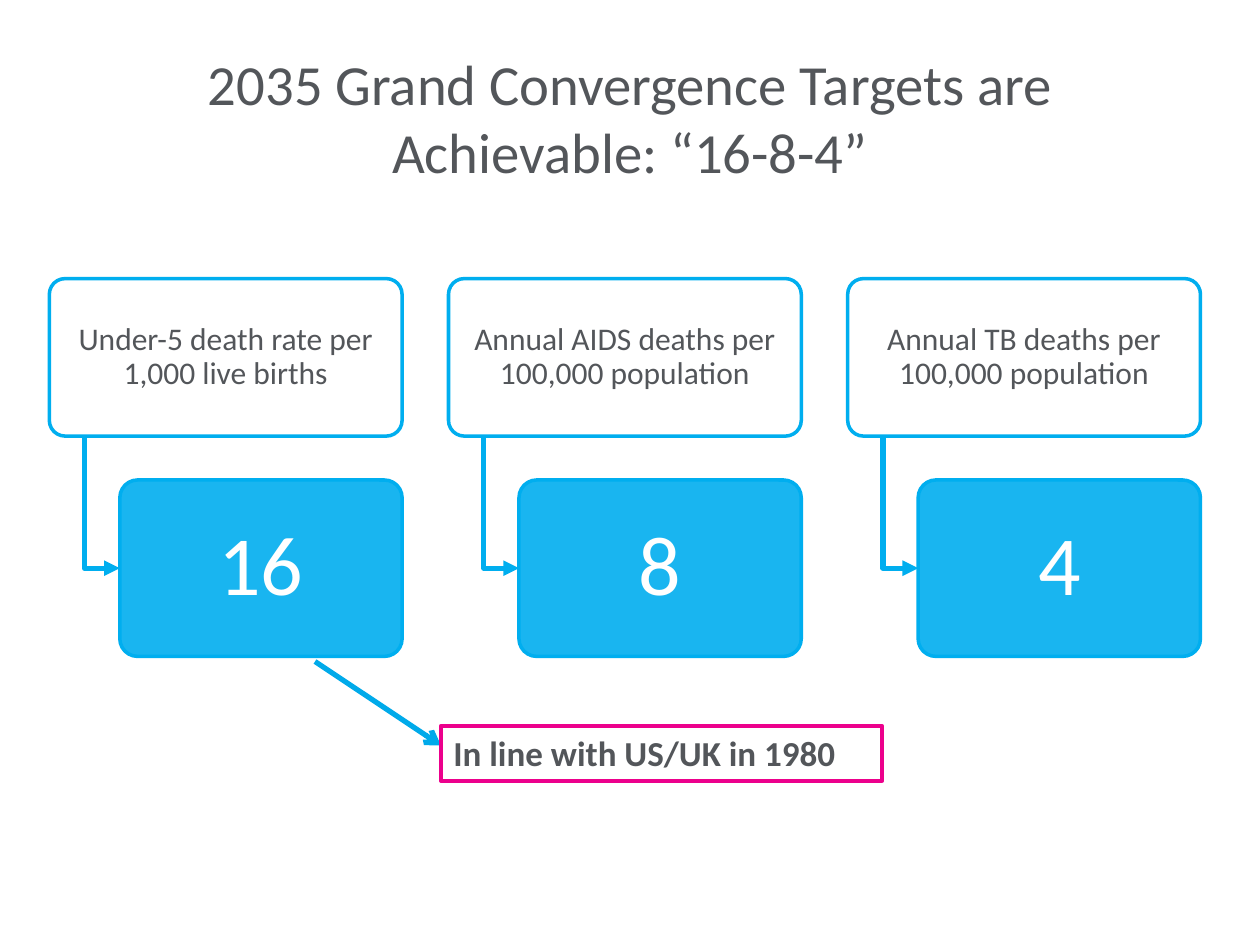
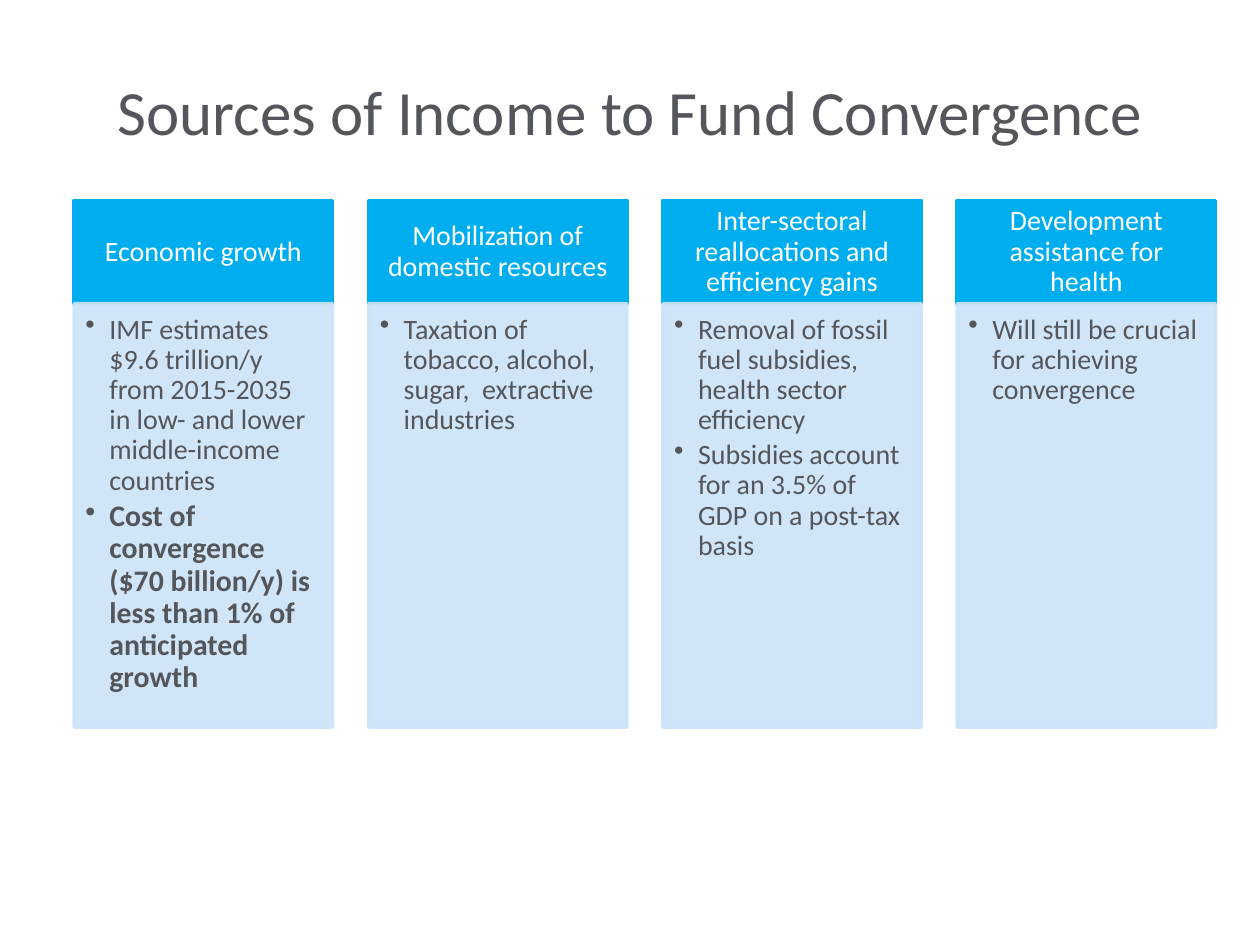
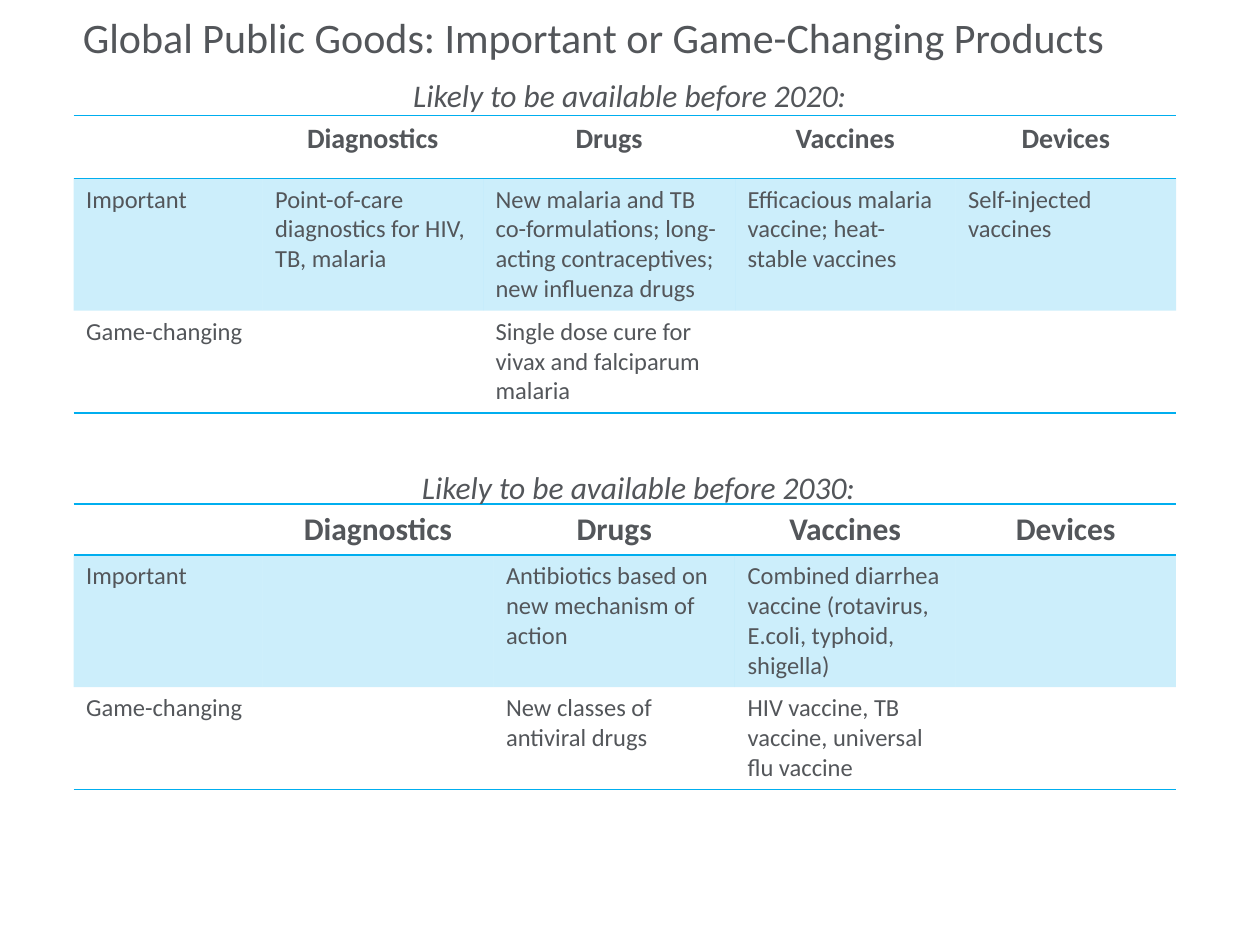
from dataclasses import dataclass
from typing import Any

from lxml import etree
from pptx import Presentation
from pptx.dml.color import RGBColor
from pptx.enum.shapes import MSO_CONNECTOR, MSO_SHAPE
from pptx.enum.text import MSO_ANCHOR, MSO_AUTO_SIZE, PP_ALIGN
from pptx.oxml.ns import qn
from pptx.util import Pt

RECTANGLE = MSO_SHAPE.RECTANGLE
ROUNDED = MSO_SHAPE.ROUNDED_RECTANGLE
STRAIGHT = MSO_CONNECTOR.STRAIGHT
TOP, MIDDLE = MSO_ANCHOR.TOP, MSO_ANCHOR.MIDDLE
LEFT, CENTER = PP_ALIGN.LEFT, PP_ALIGN.CENTER
NO_AUTOFIT, GROW = MSO_AUTO_SIZE.NONE, MSO_AUTO_SIZE.SHAPE_TO_FIT_TEXT

FONT = "Calibri"
COLOURS = {
    "text": "53565A",
    "white": "FFFFFF",
    "blue": "00AEEF",
    "arrow": "00AAEA",
    "pale": "CCE3F9",
    "pink": "EC008C",
}
TITLE_ONLY = 5
NO_TABLE_STYLE = "{2D5ABB26-0587-4C30-8999-92F81FD0307C}"


@dataclass
class Area:
    left: float
    top: float
    width: float
    height: float

    def points(self) -> list[int]:
        return [Pt(value) for value in (self.left, self.top, self.width, self.height)]


@dataclass
class Span:
    text: str
    size: float
    colour: str = "text"
    bold: bool = False
    italic: bool = False


@dataclass
class Target:
    measure: str
    value: str


@dataclass
class Source:
    heading: str
    points: list[Span]


@dataclass
class Goods:
    area: Area
    widths: list[float]
    heights: list[float]
    heading_size: float
    rows: list[list[str]]


TARGETS = [
    Target("Under-5 death rate per 1,000 live births", "16"),
    Target("Annual AIDS deaths per 100,000 population", "8"),
    Target("Annual TB deaths per 100,000 population", "4"),
]

SOURCES = [
    Source("Economic growth", [
        Span("IMF estimates $9.6 trillion/y from 2015-2035 in low- and lower "
             "middle-income countries", 16),
        Span("Cost of convergence ($70 billion/y) is less than 1% of anticipated growth",
             17, bold=True),
    ]),
    Source("Mobilization of domestic resources", [
        Span("Taxation of tobacco, alcohol, sugar,  extractive industries", 16),
    ]),
    Source("Inter-sectoral reallocations and efficiency gains", [
        Span("Removal of fossil fuel subsidies, health sector efficiency", 16),
        Span("Subsidies account for an 3.5% of GDP on a post-tax basis", 16),
    ]),
    Source("Development assistance for health", [
        Span("Will still be crucial for achieving convergence", 16),
    ]),
]

HEADINGS = ["", "Diagnostics", "Drugs", "Vaccines", "Devices"]
GOODS = [
    Goods(Area(42, 66, 630, 170), [108, 126, 144, 126, 126], [36, 75.5, 58.5], 16, [
        ["Important", "Point-of-care diagnostics for HIV, TB, malaria",
         "New malaria and TB co-formulations; long-acting contraceptives; "
         "new influenza drugs",
         "Efficacious malaria vaccine; heat-stable vaccines", "Self-injected vaccines"],
        ["Game-changing", "", "Single dose cure for vivax and falciparum malaria", "", ""],
    ]),
    Goods(Area(42, 288, 630, 163), [108, 132, 138, 126, 126], [29, 75.5, 58.5], 18, [
        ["Important", "", "Antibiotics based on new mechanism of action",
         "Combined diarrhea vaccine (rotavirus, E.coli, typhoid, shigella)", ""],
        ["Game-changing", "", "New classes of antiviral drugs",
         "HIV vaccine, TB vaccine, universal flu vaccine", ""],
    ]),
]


def colour_of(name: str) -> RGBColor:
    return RGBColor.from_string(COLOURS[name])


def apply_format(item: Any, values: dict[str, Any]) -> None:
    for name, value in values.items():
        setattr(item, name, value)


def add_element(parent: Any, tag: str, **attributes: str) -> Any:
    return etree.SubElement(parent, qn(tag), attributes)


def fade(element: Any, percent: int) -> None:
    for colour in element.iter(qn("a:srgbClr")):
        add_element(colour, "a:alpha", val=str(percent * 1000))


def write(para: Any, span: Span, **values: Any) -> None:
    apply_format(para, values)
    run = para.add_run()
    run.text = span.text
    apply_format(run.font, {"name": FONT, "size": Pt(span.size),
                            "bold": span.bold, "italic": span.italic})
    run.font.color.rgb = colour_of(span.colour)


def set_frame(frame: Any, anchor: Any, insets: tuple[float, ...] = (7.2, 3.6, 7.2, 3.6),
              auto_size: Any = NO_AUTOFIT) -> None:
    sides = ("margin_left", "margin_top", "margin_right", "margin_bottom")
    apply_format(frame, {"word_wrap": True, "auto_size": auto_size, "vertical_anchor": anchor,
                         **{side: Pt(inset) for side, inset in zip(sides, insets)}})


def add_titled_page(deck: Any, text: str, size: float, area: Area) -> Any:
    page = deck.slides.add_slide(deck.slide_layouts[TITLE_ONLY])
    title = page.shapes.title
    apply_format(title, dict(zip(("left", "top", "width", "height"), area.points())))
    set_frame(title.text_frame, MIDDLE)
    write(title.text_frame.paragraphs[0], Span(text, size), alignment=CENTER)
    return page


def add_block(page: Any, kind: Any, area: Area, fill: str, line: str) -> Any:
    block = page.shapes.add_shape(kind, *area.points())
    block.shadow.inherit = False
    block.fill.solid()
    block.fill.fore_color.rgb = colour_of(fill)
    set_line(block, line, 2)
    if kind == ROUNDED:
        block.adjustments[0] = 0.1
    return block


def set_line(shape: Any, colour: str, width: float) -> None:
    shape.line.color.rgb = colour_of(colour)
    shape.line.width = Pt(width)


def set_arrow(shape: Any, head: str) -> None:
    add_element(shape._element.spPr.find(qn("a:ln")), "a:tailEnd", type=head)


def add_label(block: Any, span: Span, insets: tuple[float, ...]) -> None:
    set_frame(block.text_frame, MIDDLE, insets)
    write(block.text_frame.paragraphs[0], span, alignment=CENTER, line_spacing=0.9)


def add_text(page: Any, area: Area, span: Span, alignment: Any = LEFT,
             auto_size: Any = GROW) -> Any:
    box = page.shapes.add_textbox(*area.points())
    set_frame(box.text_frame, TOP, auto_size=auto_size)
    write(box.text_frame.paragraphs[0], span, alignment=alignment)
    return box


def add_target(page: Any, target: Target, left: float) -> None:
    measure = add_block(page, ROUNDED, Area(left, 159.2, 201.6, 90), "white", "blue")
    add_label(measure, Span(target.measure, 18), (2.9, 2, 2.9, 2))

    elbow_left, value_left, value_middle = left + 20.2, left + 40.3, 324.7
    builder = page.shapes.build_freeform(Pt(elbow_left), Pt(249.2))
    builder.add_line_segments([(Pt(elbow_left), Pt(value_middle)),
                               (Pt(value_left), Pt(value_middle))], close=False)
    elbow = builder.convert_to_shape()
    elbow.shadow.inherit = False
    elbow.fill.background()
    set_line(elbow, "blue", 3)
    set_arrow(elbow, "triangle")

    value = add_block(page, ROUNDED, Area(value_left, 274.3, 161.3, 100.8), "blue", "blue")
    fade(value._element.spPr.find(qn("a:solidFill")), 90)
    add_label(value, Span(target.value, 48, "white"), (7.2, 5, 7.2, 5))


def add_source(page: Any, source: Source, left: float) -> None:
    heading = add_block(page, RECTANGLE, Area(left, 114.5, 147.6, 59), "blue", "blue")
    add_label(heading, Span(source.heading, 16, "white"), (9, 5, 9, 5))

    body = add_block(page, RECTANGLE, Area(left, 173.5, 147.6, 242), "pale", "pale")
    fade(body._element.spPr, 90)
    frame = body.text_frame
    set_frame(frame, TOP, (6.4, 6.4, 8.5, 9.6))
    for index, point in enumerate(source.points):
        para = frame.add_paragraph() if index else frame.paragraphs[0]
        properties = para._p.get_or_add_pPr()
        properties.set("marL", str(Pt(13.7)))
        properties.set("indent", str(-Pt(13.7)))
        add_element(properties, "a:buChar", char="•")
        write(para, point, alignment=LEFT, line_spacing=0.9, space_after=Pt(2.8))


def set_border(cell: Any, side: str) -> None:
    line = etree.Element(qn(side), w=str(Pt(1)))
    add_element(add_element(line, "a:solidFill"), "a:srgbClr", val=COLOURS["blue"])
    cell._tc.get_or_add_tcPr().insert(0, line)


def add_goods(page: Any, goods: Goods) -> None:
    rows = [HEADINGS, *goods.rows]
    frame = page.shapes.add_table(len(rows), len(HEADINGS), *goods.area.points())
    table = frame.table
    table._tbl.tblPr.find(qn("a:tableStyleId")).text = NO_TABLE_STYLE
    apply_format(table, {"first_row": False, "horz_banding": False})
    for column, width in zip(table.columns, goods.widths):
        column.width = Pt(width)
    for row, height in zip(table.rows, goods.heights):
        row.height = Pt(height)
    for row_index, texts in enumerate(rows):
        is_heading = row_index == 0
        size = goods.heading_size if is_heading else 14
        for column_index, text in enumerate(texts):
            cell = table.cell(row_index, column_index)
            if row_index == 1:
                cell.fill.solid()
                cell.fill.fore_color.rgb = colour_of("blue")
                fade(cell._tc.tcPr, 20)
            else:
                cell.fill.background()
                set_border(cell, "a:lnB")
            if is_heading:
                set_border(cell, "a:lnT")
            if text:
                write(cell.text_frame.paragraphs[0], Span(text, size, bold=is_heading),
                      alignment=CENTER if is_heading else LEFT)


def build_targets(deck: Any) -> None:
    page = add_titled_page(deck, "2035 Grand Convergence Targets are Achievable: “16-8-4”",
                           32.4, Area(36, 21.6, 648, 90))
    for index, target in enumerate(TARGETS):
        add_target(page, target, 28.2 + 228.1 * index)
    arrow = page.shapes.add_connector(STRAIGHT, Pt(180), Pt(378), Pt(252), Pt(426))
    set_line(arrow, "arrow", 3)
    set_arrow(arrow, "arrow")
    add_element(arrow._element.spPr, "a:effectLst")
    remark = add_text(page, Area(252, 414.7, 252, 31.5),
                      Span("In line with US/UK in 1980", 20, bold=True))
    set_line(remark, "pink", 2.25)


def build_sources(deck: Any) -> None:
    page = add_titled_page(deck, "Sources of Income to Fund Convergence",
                           36, Area(36, 18, 648, 90))
    for index, source in enumerate(SOURCES):
        add_source(page, source, 42.4 + 168.2 * index)


def build_goods(deck: Any) -> None:
    page = add_titled_page(deck, "Global Public Goods: Important or Game-Changing Products ",
                           24, Area(36, -6, 612, 54))
    add_text(page, Area(36, 40, 648, 356),
             Span("Likely to be available before 2020:", 18, italic=True), CENTER, NO_AUTOFIT)
    for goods in GOODS:
        add_goods(page, goods)
    add_text(page, Area(234, 264, 300, 51),
             Span("Likely to be available before 2030:", 18, italic=True))


def main() -> None:
    deck = Presentation()
    apply_format(deck, {"slide_width": Pt(720), "slide_height": Pt(540)})
    build_targets(deck)
    build_sources(deck)
    build_goods(deck)
    deck.save("out.pptx")


if __name__ == "__main__":
    main()
